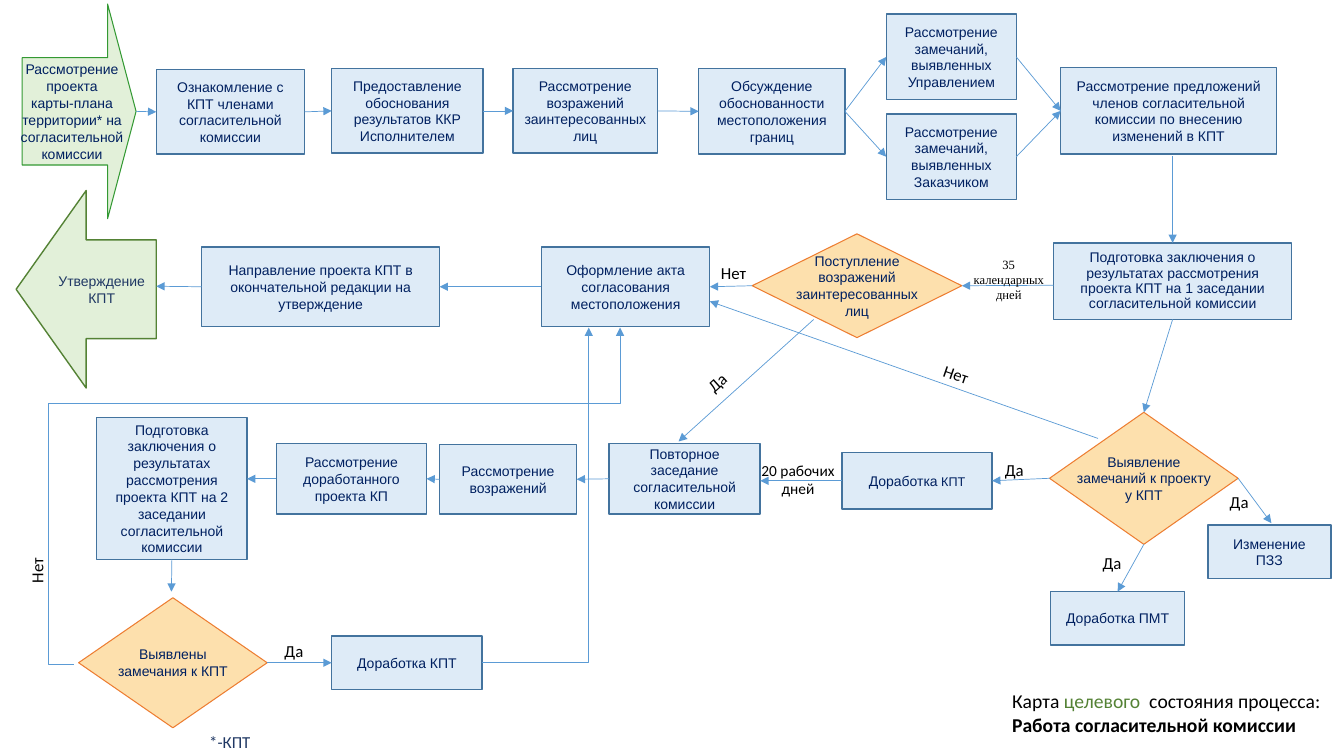
from lxml import etree
from pptx import Presentation
from pptx import util as u
from pptx.dml.color import RGBColor
from pptx.enum import shapes, text
from pptx.oxml import ns

TOP, LEFT, BOTTOM, RIGHT = range(4)
NAVY, BLACK, INK, GREEN, BLUE = "002060", "000000", "203864", "548235", "5B9BD5"

STYLES = {
    "step": (shapes.MSO_SHAPE.RECTANGLE, "DEEBF7", "43739E", 1, NAVY, True),
    "check": (shapes.MSO_SHAPE.DIAMOND, "FDE0AD", "ED7D31", 0.75, NAVY, False),
    "start": (shapes.MSO_SHAPE.RIGHT_ARROW, "E2F0D9", "339933", 0.75, NAVY, False),
    "finish": (shapes.MSO_SHAPE.LEFT_ARROW, "E2F0D9", GREEN, 1, INK, True),
}

STAGES = {
    "remarks": ("check", (10.41, 4.09, 1.87, 1.31),
                ["Выявление", "замечаний к проекту", "у КПТ"]),
    "start": ("start", (0.22, 0.04, 1.13, 2.13),
              ["Рассмотрение", "проекта", "карты-плана", "территории* на",
               "согласительной", "комиссии"]),
    "conclusion": ("step", (10.45, 2.41, 2.36, 0.76),
                   ["Подготовка заключения о результатах рассмотрения проекта КПТ "
                    "на 1 заседании согласительной комиссии"]),
    "review": ("step", (1.55, 0.69, 1.47, 0.84),
               ["Ознакомление с КПТ членами согласительной комиссии"]),
    "basis": ("step", (3.29, 0.68, 1.5, 0.84),
              ["Предоставление обоснования результатов ККР Исполнителем"]),
    "objections": ("step", (5.09, 0.68, 1.43, 0.84),
                   ["Рассмотрение возражений заинтересованных лиц"]),
    "discussion": ("step", (6.93, 0.68, 1.45, 0.85),
                   ["Обсуждение обоснованности местоположения границ"]),
    "office": ("step", (8.79, 0.14, 1.29, 0.85),
               ["Рассмотрение замечаний, выявленных Управлением"]),
    "customer": ("step", (8.79, 1.13, 1.29, 0.85),
                 ["Рассмотрение замечаний, выявленных Заказчиком"]),
    "proposals": ("step", (10.52, 0.67, 2.14, 0.86),
                  ["Рассмотрение предложений членов согласительной комиссии "
                   "по внесению изменений в КПТ"]),
    "rework": ("step", (8.35, 4.49, 1.49, 0.56), [[("Доработка", 10), (" КПТ", 9)]]),
    "act": ("step", (5.37, 2.45, 1.67, 0.79),
            ["Оформление акта согласования местоположения"]),
    "repeat": ("step", (6.04, 4.4, 1.5, 0.7),
               [[("Повторное заседание согласительной", 10), (" ", 9), ("комиссии", 10)]]),
    "second objections": ("step", (4.36, 4.41, 1.36, 0.69), ["Рассмотрение возражений"]),
    "reworked": ("step", (2.74, 4.4, 1.49, 0.7),
                 [[("Рассмотрение доработанного", 10), (" ", 9), ("проекта КП", 10)]]),
    "second remarks": ("check", (0.78, 5.93, 1.87, 1.29), ["Выявлены", "замечания к КПТ"]),
    "second conclusion": ("step", (0.96, 4.14, 1.49, 1.41),
                          ["Подготовка заключения о результатах рассмотрения проекта КПТ "
                           "на 2 заседании согласительной комиссии"]),
    "second rework": ("step", (3.29, 6.31, 1.49, 0.53), ["Доработка КПТ"]),
    "sending": ("step", (2, 2.45, 2.36, 0.79),
                ["Направление проекта КПТ в окончательной редакции на утверждение"]),
    "claims": ("check", (7.46, 2.32, 2.08, 1.03),
               ["Поступление", "возражений", "заинтересованных", "лиц"]),
    "finish": ("finish", (0.16, 1.89, 1.39, 1.96), ["Утверждение КПТ"]),
    "zoning": ("step", (11.98, 5.21, 1.22, 0.53), ["Изменение ПЗЗ"]),
    "survey": ("step", (10.42, 5.87, 1.33, 0.53), ["Доработка ПМТ"]),
}

LINKS = [
    (("start", RIGHT), ("review", LEFT)),
    (("review", RIGHT), ("basis", LEFT)),
    (("basis", RIGHT), ("objections", LEFT)),
    (("objections", RIGHT), ("discussion", LEFT)),
    (("discussion", RIGHT), ("office", LEFT)),
    (("discussion", RIGHT), ("customer", LEFT)),
    (("office", RIGHT), ("proposals", LEFT)),
    (("customer", RIGHT), ("proposals", LEFT)),
    ((11.63, 1.55), ("conclusion", TOP)),
    ((10.45, 2.83), ("claims", RIGHT)),
    (("conclusion", BOTTOM), ("remarks", TOP)),
    (("remarks", LEFT), ("rework", RIGHT)),
    ((10.89, 4.35), (7.04, 2.99)),
    (("claims", LEFT), ("act", RIGHT)),
    (("rework", LEFT), (7.54, 4.77)),
    ((8.07, 3.17), (6.73, 4.38)),
    (("act", LEFT), ("sending", RIGHT)),
    (("sending", LEFT), (1.55, 2.84)),
    (("repeat", LEFT), ("second objections", RIGHT)),
    (("second objections", LEFT), ("reworked", RIGHT)),
    (("reworked", LEFT), (2.45, 4.75)),
    (("second conclusion", BOTTOM), (1.7, 5.87)),
    (("second remarks", RIGHT), ("second rework", LEFT)),
    (("remarks", RIGHT), (12.61, 5.19)),
    (("remarks", BOTTOM), ("survey", TOP)),
]

BENDS = [
    ((0.73, 6.59), (6.15, 3.25), "bentConnector4", (-4600, 77400)),
    ((4.78, 6.57), (5.84, 3.25), "bentConnector2", ()),
]

LABELS = [
    ("35 календарных дней", (9.53, 2.55, 0.95, 0.44), 9, "Times New Roman", BLACK, 0),
    ("Да", (9.84, 4.52, 0.44, 0.28), 12, "Calibri", BLACK, 0),
    ("Нет", (9.2, 3.55, 0.57, 0.32), 12, "Calibri", BLACK, 19),
    ("Нет", (7.01, 2.62, 0.53, 0.18), 12, "Calibri", BLACK, 0),
    ("20 рабочих дней", (7.43, 4.61, 0.97, 0.29), 11, "Calibri", BLACK, 0),
    ("Да", (6.8, 3.68, 0.62, 0.22), 12, "Calibri", BLACK, -42),
    ("Да", (2.65, 6.32, 0.53, 0.27), 12, "Calibri", BLACK, 0),
    ("Нет", (0.03, 5.18, 0.67, 0.96), 12, "Calibri", BLACK, -90),
    ("*-КПТ", (0.78, 7.22, 3, 0.28), 12, "Calibri", INK, 0),
    ("Да", (10.81, 5.44, 0.44, 0.28), 12, "Calibri", BLACK, 0),
    ("Да", (12.07, 4.84, 0.44, 0.28), 12, "Calibri", BLACK, 0),
]

TITLE_AT = (9.94, 6.79, 3.3, 0.57)
TITLE = [
    [("Карта ", BLACK, False), ("целевого ", GREEN, False),
     (" состояния процесса:", BLACK, False)],
    [("Работа согласительной комиссии", BLACK, True)],
]


def color(value):
    return RGBColor.from_string(value)


def place(at):
    return [u.Inches(length) for length in at]


def add_run(paragraph, words, size, face, ink, bold=False):
    run = paragraph.add_run()
    run.text = words
    run.font.size, run.font.name, run.font.bold = u.Pt(size), face, bold
    run.font.color.rgb = color(ink)


def paragraph_at(frame, index):
    return frame.add_paragraph() if index else frame.paragraphs[0]


def add_stage(slide, kind, at, lines):
    preset, fill, edge, width, ink, wrap = STYLES[kind]
    stage = slide.shapes.add_shape(preset, *place(at))
    stage.shadow.inherit = False
    stage.fill.solid()
    stage.fill.fore_color.rgb = color(fill)
    stage.line.color.rgb = color(edge)
    stage.line.width = u.Pt(width)
    frame = stage.text_frame
    frame.word_wrap = wrap
    frame.vertical_anchor = text.MSO_ANCHOR.MIDDLE
    for index, line in enumerate(lines):
        paragraph = paragraph_at(frame, index)
        paragraph.alignment = text.PP_ALIGN.CENTER
        for words, size in [(line, 10)] if isinstance(line, str) else line:
            add_run(paragraph, words, size, "Arial", ink)
    return stage


def add_arrow(slide, kind, begin, end):
    arrow = slide.shapes.add_connector(kind, *place(begin + end))
    arrow.line.color.rgb = color(BLUE)
    arrow.line.width = u.Pt(0.5)
    etree.SubElement(arrow.line._get_or_add_ln(), ns.qn("a:tailEnd"), type="triangle")
    etree.SubElement(arrow._element.spPr, ns.qn("a:effectLst"))
    return arrow


def add_link(slide, stages, begin, end):
    ends = [(0, 0) if isinstance(point[0], str) else point for point in (begin, end)]
    link = add_arrow(slide, shapes.MSO_CONNECTOR.STRAIGHT, *ends)
    for point, join in ((begin, link.begin_connect), (end, link.end_connect)):
        if isinstance(point[0], str):
            join(stages[point[0]], point[1])


def add_bend(slide, begin, end, preset, guides):
    geometry = add_arrow(slide, shapes.MSO_CONNECTOR.ELBOW, begin, end)._element.spPr.prstGeom
    geometry.set("prst", preset)
    adjustments = geometry.get_or_add_avLst()
    for number, value in enumerate(guides, 1):
        etree.SubElement(adjustments, ns.qn("a:gd"), name=f"adj{number}", fmla=f"val {value}")


def add_label(slide, words, at, size, face, ink, angle):
    label = slide.shapes.add_textbox(*place(at))
    label.rotation = angle
    frame = label.text_frame
    frame.word_wrap = True
    frame.vertical_anchor = text.MSO_ANCHOR.MIDDLE
    frame.paragraphs[0].alignment = text.PP_ALIGN.CENTER
    add_run(frame.paragraphs[0], words, size, face, ink)


def main():
    deck = Presentation()
    deck.slide_width, deck.slide_height = place((13.33, 7.5))
    slide = deck.slides.add_slide(deck.slide_layouts[6])

    stages = {name: add_stage(slide, *stage) for name, stage in STAGES.items()}
    stages["start"].adjustments[1] = 0.25
    stages["conclusion"].text_frame.paragraphs[0].line_spacing = 0.9
    finish = stages["finish"].text_frame
    finish.margin_left, finish.margin_right = place((0.04, 0.08))

    for link in LINKS:
        add_link(slide, stages, *link)
    for bend in BENDS:
        add_bend(slide, *bend)
    for label in LABELS:
        add_label(slide, *label)

    title = slide.shapes.add_textbox(*place(TITLE_AT)).text_frame
    title.word_wrap = True
    for index, line in enumerate(TITLE):
        paragraph = paragraph_at(title, index)
        for words, ink, bold in line:
            add_run(paragraph, words, 14, "Calibri", ink, bold)

    deck.save("out.pptx")


if __name__ == "__main__":
    main()
